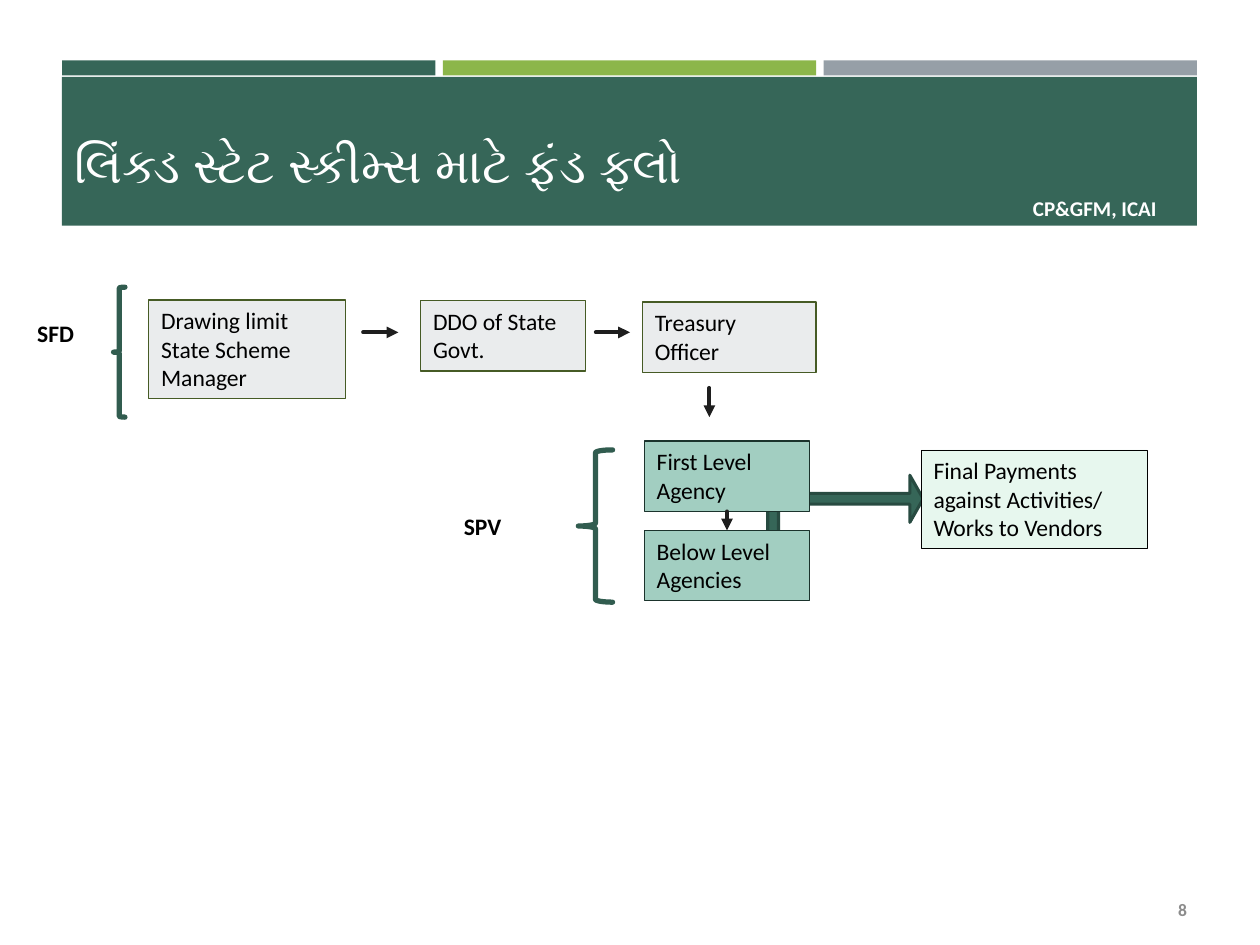
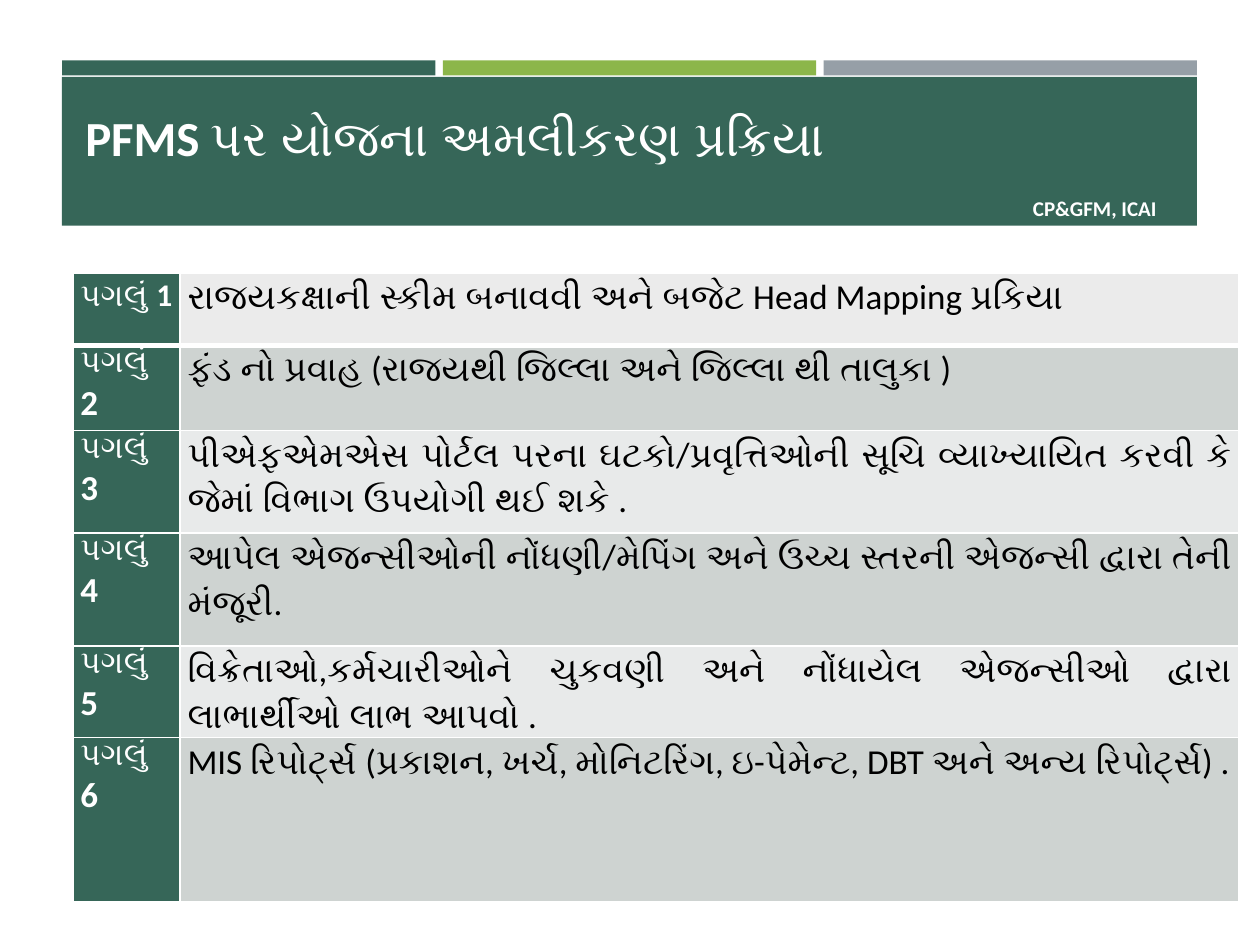
from dataclasses import dataclass
from typing import NamedTuple

from lxml.etree import SubElement
from pptx import Presentation
from pptx.dml.color import RGBColor
from pptx.enum.shapes import MSO_CONNECTOR, MSO_SHAPE
from pptx.enum.text import MSO_ANCHOR, PP_ALIGN
from pptx.oxml.ns import qn
from pptx.util import Cm, Pt


@dataclass(frozen=True)
class Theme:
    """Colours, font and type sizes shared by the slides."""

    font: str = "Calibri"
    green: str = "366658"
    lime: str = "8CB64A"
    grey: str = "969FA7"
    white: str = "FFFFFF"
    black: str = "000000"
    arrow: str = "1E1E1E"
    brace: str = "315C4F"
    payment_edge: str = "284B41"
    page_grey: str = "8C8C8C"
    first_row: str = "EBEBEB"
    odd_row: str = "E8EAEA"
    even_row: str = "CED3D1"
    title_size: float = 28
    body_size: float = 20
    step_size: float = 18
    flow_size: float = 13.5
    credit_size: float = 12
    page_size: float = 10


class Box(NamedTuple):
    """A rectangle in centimetres."""

    left: float
    top: float
    width: float
    height: float

    def inside(self, left, top, width, height):
        """Return a box placed relative to this one."""
        return Box(self.left + left, self.top + top, width, height)

    def lengths(self):
        """Return the four sides as slide lengths."""
        return [Cm(value) for value in self]


class BoxStyle(NamedTuple):
    """Fill, edge colour and edge width of a flow box."""

    fill: str
    edge: str
    width: float


THEME = Theme()
HEADER = Box(1.25, 1.22, 22.88, 3.33)
FLOW = Box(0.5, 5.79, 22.6, 6.4)
STEPS = Box(1.47, 5.51, 23.5, 12.55)
PAGE_NUMBER = Box(22.05, 17.83, 2.13, 1.02)

STATE_STYLE = BoxStyle("EAECED", "465B25", 0.75)
AGENCY_STYLE = BoxStyle("A2CEC1", "1B332C", 0.75)
VENDOR_STYLE = BoxStyle("E7F7EE", "000000", 0.25)

STEP_ROWS = [
    (1.45, "રાજયકક્ષાની સ્કીમ બનાવવી અને બજેટ Head Mapping પ્રકિયા"),
    (1.6, "ફંડ નો પ્રવાહ (રાજયથી જિલ્લા અને જિલ્લા થી તાલુકા )"),
    (2.06, "પીએફએમએસ પોર્ટલ પરના ઘટકો/પ્રવૃત્તિઓની સૂચિ વ્યાખ્યાયિત કરવી કે જેમાં વિભાગ ઉપયોગી થઈ શકે ."),
    (2.28, "આપેલ એજન્સીઓની નોંધણી/મેપિંગ અને ઉચ્ચ સ્તરની એજન્સી દ્વારા તેની મંજૂરી."),
    (1.85, "વિક્રેતાઓ,કર્મચારીઓને ચુકવણી અને નોંધાયેલ એજન્સીઓ દ્વારા લાભાર્થીઓ લાભ આપવો ."),
    (3.31, "MIS રિપોર્ટ્સ (પ્રકાશન, ખર્ચ, મોનિટરિંગ, ઇ-પેમેન્ટ, DBT અને અન્ય રિપોર્ટ્સ) ."),
]


def color(value):
    """Turn a hex string into a colour."""
    return RGBColor.from_string(value)


def add_run(paragraph, text, size, ink=THEME.black, bold=False):
    """Append one formatted run."""
    run = paragraph.add_run()
    run.text = text
    run.font.name = THEME.font
    run.font.size = Pt(size)
    run.font.bold = bold
    run.font.color.rgb = color(ink)


def write(shape, text, size, ink=THEME.black, bold=False,
          align=PP_ALIGN.LEFT, anchor=MSO_ANCHOR.TOP):
    """Fill a shape's frame with a single paragraph."""
    frame = shape.text_frame
    frame.word_wrap = True
    frame.vertical_anchor = anchor
    paragraph = frame.paragraphs[0]
    paragraph.alignment = align
    add_run(paragraph, text, size, ink, bold)


def add_text(slide, box, text, size, **options):
    """Add a text box."""
    write(slide.shapes.add_textbox(*box.lengths()), text, size, **options)


def add_shape(slide, kind, box, fill=None, edge=None, width=1):
    """Add a flat preset shape with optional fill and edge."""
    shape = slide.shapes.add_shape(kind, *box.lengths())
    shape.shadow.inherit = False
    if fill:
        shape.fill.solid()
        shape.fill.fore_color.rgb = color(fill)
    else:
        shape.fill.background()
    if edge:
        shape.line.color.rgb = color(edge)
        shape.line.width = Pt(width)
    else:
        shape.line.fill.background()
    return shape


def add_flow_box(slide, box, text, style):
    """Add a labelled box of the fund flow."""
    shape = add_shape(slide, MSO_SHAPE.RECTANGLE, box, *style)
    write(shape, text, THEME.flow_size)
    return shape


def add_brace(slide, box):
    """Add a left brace with rounded ends."""
    brace = add_shape(slide, MSO_SHAPE.LEFT_BRACE, box, edge=THEME.brace, width=3)
    brace.line._get_or_add_ln().set("cap", "rnd")


def add_arrow(slide, start, end):
    """Add a straight arrow between two points."""
    points = [Cm(value) for value in (*start, *end)]
    arrow = slide.shapes.add_connector(MSO_CONNECTOR.STRAIGHT, *points)
    arrow.line.color.rgb = color(THEME.arrow)
    arrow.line.width = Pt(2.25)
    line = arrow.line._get_or_add_ln()
    line.set("cap", "rnd")
    SubElement(line, qn("a:tailEnd"), type="triangle")
    SubElement(arrow._element.spPr, qn("a:effectLst"))
    return arrow


def add_header(slide, box, title, title_box):
    """Draw the three strips, the band, the credit and the title."""
    gap = 0.15
    strip_width = (box.width - 2 * gap) / 3
    for index, fill in enumerate((THEME.green, THEME.lime, THEME.grey)):
        strip = box.inside(index * (strip_width + gap), 0, strip_width, 0.3)
        add_shape(slide, MSO_SHAPE.RECTANGLE, strip, fill)
    add_shape(slide, MSO_SHAPE.RECTANGLE, box.inside(0, 0.33, box.width, 3), THEME.green)
    credit = add_shape(slide, MSO_SHAPE.RECTANGLE,
                       box.inside(19.04, 2.74, 3.56, 0.46), THEME.green)
    write(credit, "CP&GFM, ICAI", THEME.credit_size, THEME.white, True,
          PP_ALIGN.CENTER, MSO_ANCHOR.MIDDLE)
    add_text(slide, box.inside(*title_box), title, THEME.title_size,
             ink=THEME.white, bold=True, anchor=MSO_ANCHOR.MIDDLE)


def add_state_flow(slide, box):
    """Draw the state department row of the flow."""
    add_text(slide, box.inside(0, 0.51, 1.78, 0.84), "SFD", THEME.flow_size, bold=True)
    add_brace(slide, box.inside(1.79, 0, 0.23, 2.62))
    for left, top, width, height, text in (
        (2.5, 0.26, 3.96, 1.98, "Drawing limit State Scheme Manager"),
        (7.98, 0.27, 3.33, 1.42, "DDO of State Govt."),
        (12.45, 0.3, 3.5, 1.42, "Treasury Officer"),
    ):
        add_flow_box(slide, box.inside(left, top, width, height), text, STATE_STYLE)
    for start, end in (
        ((6.82, 0.91), (7.53, 0.91)),
        ((11.51, 0.91), (12.2, 0.91)),
        ((13.8, 2.03), (13.8, 2.62)),
    ):
        add_arrow(slide, (box.left + start[0], box.top + start[1]),
                  (box.left + end[0], box.top + end[1]))


def add_agency_flow(slide, box):
    """Draw the agencies and the payment to vendors."""
    payment = add_shape(slide, MSO_SHAPE.LEFT_UP_ARROW, box.inside(14.61, 3.79, 3.5, 1.9),
                        THEME.green, THEME.payment_edge, 1.75)
    payment.rotation = 180
    for index, value in enumerate((0.114, 0.25, 0.142)):
        payment.adjustments[index] = value
    add_flow_box(slide, box.inside(18.07, 3.28, 4.55, 1.98),
                 "Final Payments against Activities/ Works to Vendors", VENDOR_STYLE)
    first, below = [
        add_flow_box(slide, box.inside(12.49, top, 3.33, 1.42), text, AGENCY_STYLE)
        for top, text in ((3.1, "First Level Agency"), (4.9, "Below Level Agencies"))
    ]
    arrow = add_arrow(slide, (0, 0), (1, 1))
    arrow.begin_connect(first, 2)
    arrow.end_connect(below, 0)
    add_brace(slide, box.inside(11.16, 3.28, 0.69, 3.07))
    add_text(slide, box.inside(8.6, 4.4, 2.03, 0.84), "SPV", THEME.flow_size, bold=True)


def set_borders(cell, top, bottom):
    """Give a cell white borders with the given top and bottom widths."""
    properties = cell._tc.get_or_add_tcPr()
    for side, width in (("L", 1), ("R", 1), ("T", top), ("B", bottom)):
        line = SubElement(properties, qn(f"a:ln{side}"), w=str(Pt(width)))
        fill = SubElement(line, qn("a:solidFill"))
        SubElement(fill, qn("a:srgbClr"), val=THEME.white)


def style_cell(cell, fill, number, align):
    """Format a step cell and return its paragraph."""
    set_borders(cell, 3 if number == 2 else 1, 3 if number == 1 else 1)
    cell.fill.solid()
    cell.fill.fore_color.rgb = color(fill)
    cell.margin_left = cell.margin_right = Cm(0.15)
    cell.margin_top = cell.margin_bottom = 0
    paragraph = cell.text_frame.paragraphs[0]
    paragraph.alignment = align
    paragraph.line_spacing = 1.07
    return paragraph


def add_steps_table(slide, box):
    """Draw the table of numbered steps."""
    table = slide.shapes.add_table(len(STEP_ROWS), 2, *box.lengths()).table
    table.first_row = table.horz_banding = False
    label_width = 2.16
    table.columns[0].width = Cm(label_width)
    table.columns[1].width = Cm(box.width - label_width)
    for number, (height, text) in enumerate(STEP_ROWS, 1):
        row = table.rows[number - 1]
        row.height = Cm(height)
        is_first = number == 1
        label = style_cell(row.cells[0], THEME.green, number, PP_ALIGN.JUSTIFY)
        add_run(label, "પગલું ", THEME.step_size, THEME.white, True)
        add_run(label, str(number), THEME.step_size if is_first else THEME.body_size,
                THEME.white, True)
        band = THEME.odd_row if number % 2 else THEME.even_row
        body = style_cell(row.cells[1], THEME.first_row if is_first else band, number,
                          PP_ALIGN.LEFT if is_first else PP_ALIGN.JUSTIFY)
        add_run(body, text, THEME.body_size)


def add_flow_slide(slide):
    """Build the fund flow slide."""
    add_header(slide, HEADER, "લિંક્ડ સ્ટેટ સ્કીમ્સ માટે ફંડ ફ્લો", (0, 0.69, 19.79, 2.79))
    add_state_flow(slide, FLOW)
    add_agency_flow(slide, FLOW)
    add_text(slide, PAGE_NUMBER, "8", THEME.page_size, ink=THEME.page_grey, bold=True,
             align=PP_ALIGN.RIGHT, anchor=MSO_ANCHOR.MIDDLE)


def add_steps_slide(slide):
    """Build the slide of implementation steps."""
    add_header(slide, HEADER, "PFMS પર યોજના અમલીકરણ પ્રક્રિયા", (0.22, 0.69, 19.1, 1.7))
    add_steps_table(slide, STEPS)


def main():
    """Build and save the presentation."""
    presentation = Presentation()
    presentation.slide_width = Cm(25.4)
    presentation.slide_height = Cm(19.05)
    for build in (add_flow_slide, add_steps_slide):
        build(presentation.slides.add_slide(presentation.slide_layouts[6]))
    presentation.save("out.pptx")


if __name__ == "__main__":
    main()
